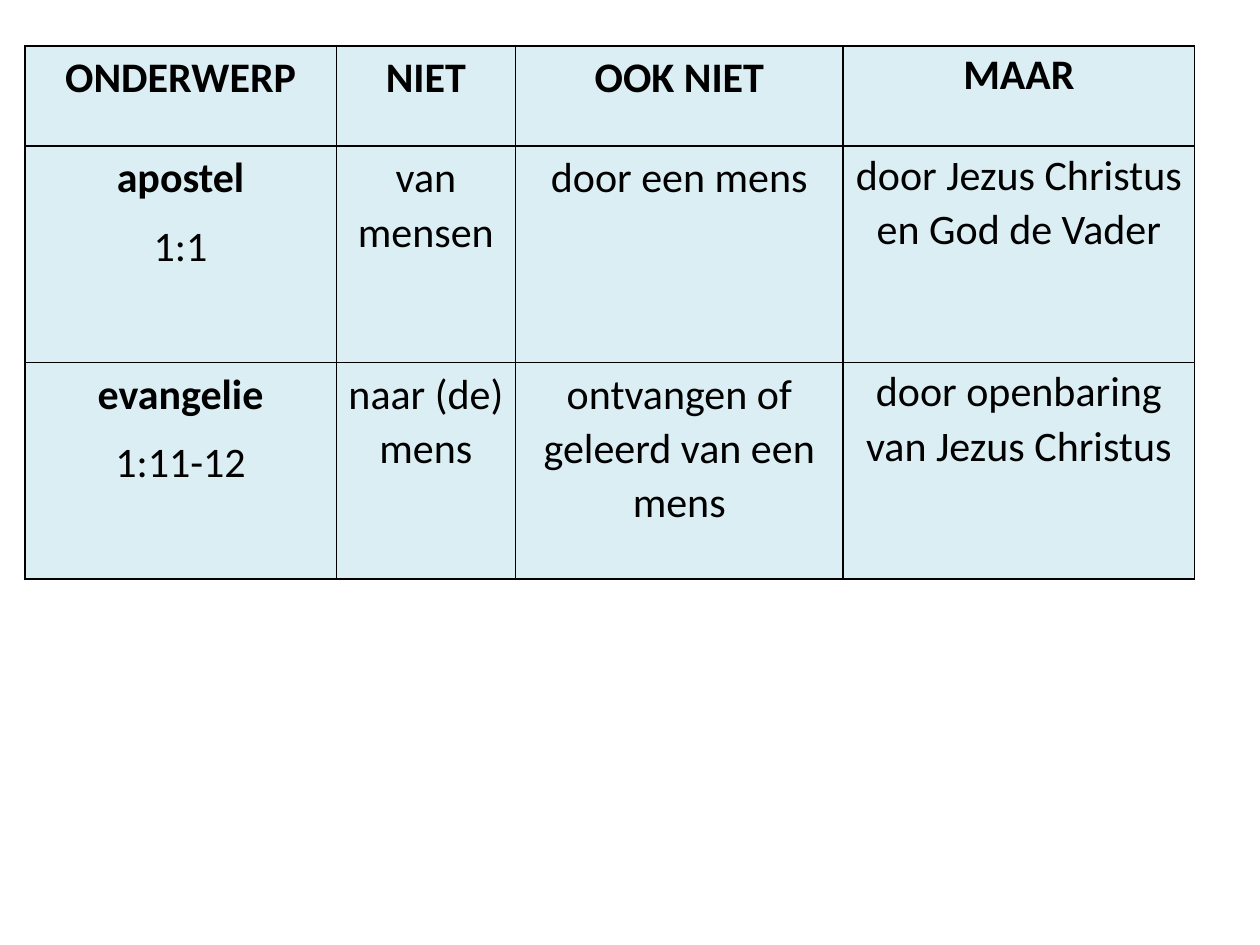
from lxml.etree import SubElement
from pptx import Presentation
from pptx.dml.color import RGBColor
from pptx.enum.text import PP_ALIGN
from pptx.oxml.ns import qn
from pptx.util import Pt

BLACK = RGBColor(0x00, 0x00, 0x00)
PALE_BLUE = RGBColor(0xDB, 0xEE, 0xF4)

COLUMN_WIDTHS = [178, 102.4, 187.2, 200.9]
ROW_HEIGHTS = [57.4, 123.7, 123.7]
ROWS = [
    ["ONDERWERP", "NIET", "OOK NIET", "MAAR"],
    ["apostel\n1:1", "van mensen", "door een mens",
     "door Jezus Christus en God de Vader"],
    ["evangelie\n1:11-12", "naar (de) mens", "ontvangen of geleerd van een mens",
     "door openbaring van Jezus Christus"],
]


def set_format(target, values):
    for name, value in values.items():
        setattr(target, name, value)


class SlideBuilder:
    font_format = {"name": "Calibri", "size": Pt(24)}
    para_format = {"alignment": PP_ALIGN.CENTER, "line_spacing": 1.06, "space_after": Pt(8)}
    margins = {"margin_left": Pt(4.3), "margin_top": Pt(2.2),
               "margin_right": Pt(4.3), "margin_bottom": Pt(2.2)}
    tight_margins = {"margin_left": Pt(0.7), "margin_top": Pt(0.7),
                     "margin_right": Pt(0.7), "margin_bottom": Pt(0)}

    def __init__(self, deck):
        self.slide = deck.slides.add_slide(deck.slide_layouts[6])

    def add_table(self, left, top, widths, heights, rows):
        """Add a table whose last column has tight cell margins."""
        frame = self.slide.shapes.add_table(
            len(rows), len(widths), Pt(left), Pt(top), Pt(sum(widths)), Pt(sum(heights)))
        table = frame.table
        set_format(table, {"first_row": False, "horz_banding": False})
        for column, width in zip(table.columns, widths):
            column.width = Pt(width)
        for row, height in zip(table.rows, heights):
            row.height = Pt(height)
        last = len(widths) - 1
        for r, texts in enumerate(rows):
            for c, text in enumerate(texts):
                cell = table.cell(r, c)
                set_format(cell, self.tight_margins if c == last else self.margins)
                self.fill_cell(cell, text, bold_start=r == 0 or c == 0)

    def fill_cell(self, cell, text, bold_start):
        """Write one paragraph per line; only the first can be bold."""
        cell.text = text
        for index, para in enumerate(cell.text_frame.paragraphs):
            set_format(para, self.para_format)
            for span in para.runs:
                set_format(span.font, self.font_format)
                span.font.bold = bold_start and index == 0
                span.font.color.rgb = BLACK
        self.add_borders(cell)
        cell.fill.solid()
        cell.fill.fore_color.rgb = PALE_BLUE

    def add_borders(self, cell):
        properties = cell._tc.get_or_add_tcPr()
        for side in ("lnL", "lnR", "lnT", "lnB"):
            line = SubElement(properties, qn(f"a:{side}"), w=str(Pt(1)))
            fill = SubElement(line, qn("a:solidFill"))
            SubElement(fill, qn("a:srgbClr"), val=str(BLACK))


def main():
    deck = Presentation()
    set_format(deck, {"slide_width": Pt(720), "slide_height": Pt(540)})
    builder = SlideBuilder(deck)
    builder.add_table(14.2, 26.2, COLUMN_WIDTHS, ROW_HEIGHTS, ROWS)
    deck.save("out.pptx")


if __name__ == "__main__":
    main()
